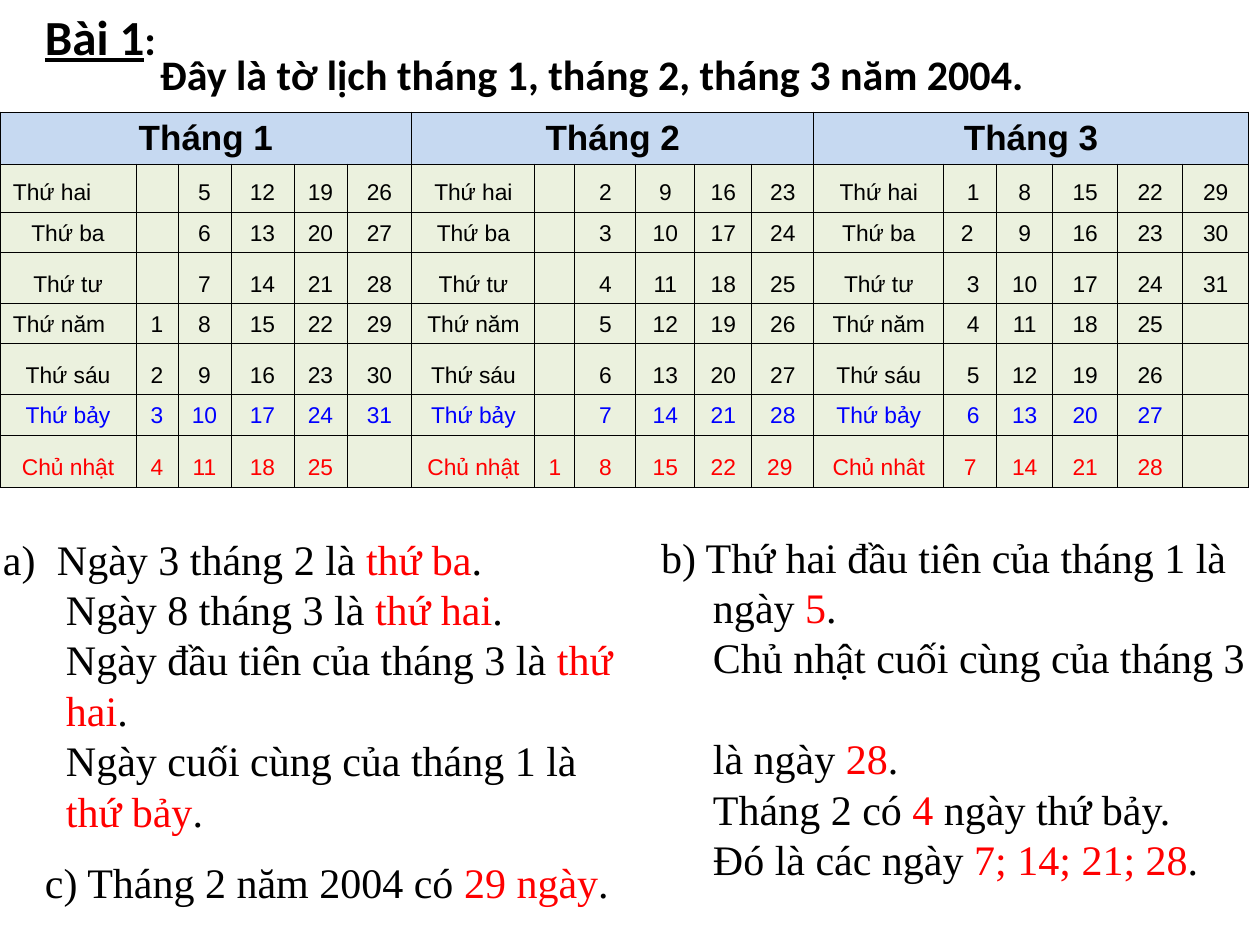
from dataclasses import dataclass

from lxml.etree import SubElement
from pptx import Presentation
from pptx.dml.color import RGBColor
from pptx.enum.text import MSO_ANCHOR as Anchor, MSO_AUTO_SIZE as AutoSize, PP_ALIGN as Align
from pptx.oxml.ns import qn
from pptx.util import Emu, Pt

PX = 914400 / 126


def px(length):
    return Emu(round(length * PX))


@dataclass(frozen=True)
class Theme:
    ink: str = "000000"
    answer: str = "FF0000"
    saturday: str = "0000FF"
    sunday: str = "FF0000"
    header_fill: str = "C6D9F1"
    day_fill: str = "EBF1DE"
    heading_font: str = "Calibri"
    table_font: str = "Arial"
    answer_font: str = "Times New Roman"
    label_size: int = 28
    text_size: int = 24
    month_size: int = 20
    day_size: int = 13
    answer_leading: float = 28.8
    border: float = 0.5
    inset: int = 13


class SlideBuilder:
    def __init__(self, slide, theme):
        self.slide = slide
        self.theme = theme

    def style(self, run, font, size, color=None, bold=False, underline=False):
        run.font.name = font
        run.font.size = Pt(size)
        run.font.bold = bold
        run.font.underline = underline
        run.font.color.rgb = RGBColor.from_string(color or self.theme.ink)

    def place(self, shape, left, top, width, height, inset_top=6):
        shape.left, shape.top, shape.width, shape.height = map(px, (left, top, width, height))
        frame = shape.text_frame
        frame.word_wrap = True
        frame.auto_size = AutoSize.NONE
        frame.vertical_anchor = Anchor.TOP
        frame.margin_left = px(self.theme.inset)
        frame.margin_top = px(inset_top)
        frame.margin_right = frame.margin_bottom = 0
        return frame

    def text_box(self):
        return self.slide.shapes.add_textbox(0, 0, 0, 0)

    def heading(self, shape, box, parts):
        """Parts are (text, size, underline)."""
        paragraph = self.place(shape, *box).paragraphs[0]
        paragraph.alignment = Align.LEFT
        for text, size, underline in parts:
            run = paragraph.add_run()
            run.text = text
            self.style(run, self.theme.heading_font, size, bold=True, underline=underline)

    def answers(self, shape, box, lines, indent=0, hanging=0, inset_top=6, gap_before=None):
        """Each line alternates plain and answer-coloured pieces."""
        theme = self.theme
        frame = self.place(shape, *box, inset_top=inset_top)
        for number, pieces in enumerate(lines):
            paragraph = frame.add_paragraph() if number else frame.paragraphs[0]
            paragraph.alignment = Align.LEFT
            paragraph.line_spacing = Pt(theme.answer_leading)
            paragraph.space_before = Pt(theme.answer_leading if number == gap_before else 0)
            properties = paragraph._p.get_or_add_pPr()
            properties.set("marL", str(px(indent if number else hanging)))
            properties.set("indent", str(px(0 if number else -hanging)))
            SubElement(properties, qn("a:buNone"))
            for index, text in enumerate(pieces):
                if text:
                    run = paragraph.add_run()
                    run.text = text
                    color = theme.answer if index % 2 else theme.ink
                    self.style(run, theme.answer_font, theme.text_size, color)

    def cell(self, cell, text, fill, size, color=None, bold=False, align=Align.CENTER, nudge=0):
        theme = self.theme
        cell.vertical_anchor = Anchor.BOTTOM
        cell.margin_left = px(theme.inset + max(nudge, 0))
        cell.margin_right = px(theme.inset + max(-nudge, 0))
        properties = cell._tc.get_or_add_tcPr()
        for side in ("lnL", "lnR", "lnT", "lnB"):
            line = SubElement(properties, qn(f"a:{side}"), w=str(Pt(theme.border)))
            SubElement(SubElement(line, qn("a:solidFill")), qn("a:srgbClr"), val=theme.ink)
        cell.fill.solid()
        cell.fill.fore_color.rgb = RGBColor.from_string(fill)
        paragraph = cell.text_frame.paragraphs[0]
        paragraph.alignment = align
        if text:
            paragraph.text = text
            self.style(paragraph.runs[0], theme.table_font, size, color, bold)
        else:
            SubElement(paragraph._p, qn("a:endParaRPr"), sz=str(size * 100))

    def calendar(self, left, top, widths, heights, months, weekdays):
        """Months are (name, date in the first Monday cell, length)."""
        theme = self.theme
        table = self.slide.shapes.add_table(
            len(heights), len(widths), px(left), px(top), px(sum(widths)), px(sum(heights))).table
        table.first_row = table.horz_banding = False
        for column, width in zip(table.columns, widths):
            column.width = px(width)
        for row, height in zip(table.rows, heights):
            row.height = px(height)
        span = len(widths) // len(months)
        colors = {6: theme.saturday, 7: theme.sunday}
        for month, (name, first_monday, length) in enumerate(months):
            start = month * span
            for column in range(start, start + span):
                self.cell(table.cell(0, column), name if column == start else "",
                          theme.header_fill, theme.month_size, bold=True)
            table.cell(0, start).merge(table.cell(0, start + span - 1))
            for row, weekday in enumerate(weekdays, 1):
                for week in range(span):
                    day = first_monday + row - 1 + 7 * (week - 1)
                    date = str(day) if 1 <= day <= length else ""
                    position = (row, start + week)
                    self.cell(table.cell(*position), date if week else weekday,
                              theme.day_fill, theme.day_size, colors.get(row),
                              align=Align.LEFT if position in LEFT_CELLS else Align.CENTER,
                              nudge=NUDGES.get(position, 0))
        # The last Sunday label is spelled differently
        table.cell(7, 12).text_frame.paragraphs[0].runs[0].text = "Chủ nhât"


WEEKDAYS = ["Thứ hai", "Thứ ba", "Thứ tư", "Thứ năm", "Thứ sáu", "Thứ bảy", "Chủ nhật"]
MONTHS = [("Tháng 1", -2, 31), ("Tháng 2", -5, 29), ("Tháng 3", 1, 31)]
COLUMN_WIDTHS = [136, 42, 53, 63, 53, 65,
                 123, 40, 61, 59, 57, 62,
                 130, 53, 56, 65, 65, 66]
ROW_HEIGHTS = [52, 48, 39, 51, 38, 51, 38, 52]
LEFT_CELLS = {(1, 0), (4, 0)}
NUDGES = {(row, 13): 6 for row in (1, 3, 4, 5, 6)} | {(2, 13): -6, (7, 11): -6}

ANSWERS_A = [
    ["a)\tNgày 3 tháng 2 là ", "thứ ba", "."],
    ["Ngày 8 tháng 3 là ", "thứ hai", "."],
    ["Ngày đầu tiên của tháng 3 là ", "thứ"],
    ["", "hai", "."],
    ["Ngày cuối cùng của tháng 1 là"],
    ["", "thứ bảy", "."],
]
ANSWERS_B = [
    ["b) Thứ hai đầu tiên của tháng 1 là"],
    ["ngày ", "5", "."],
    ["Chủ nhật cuối cùng của tháng 3"],
    ["là ngày ", "28", "."],
    ["Tháng 2 có ", "4 ", "ngày thứ bảy."],
    ["Đó là các ngày ", "7; 14; 21; 28", "."],
]
ANSWERS_C = [["c) Tháng 2 năm 2004 có ", "29 ngày", "."]]


def main():
    presentation = Presentation()
    presentation.slide_width, presentation.slide_height = px(1260), px(945)
    slide = presentation.slides.add_slide(presentation.slide_layouts[3])
    for placeholder in list(slide.placeholders):
        if placeholder.placeholder_format.idx > 2:
            placeholder.element.getparent().remove(placeholder.element)
    theme = Theme()
    builder = SlideBuilder(slide, theme)

    # Calendar of three months
    builder.calendar(0, 112, COLUMN_WIDTHS, ROW_HEIGHTS, MONTHS, WEEKDAYS)

    # Answers
    builder.answers(slide.placeholders[1], (-10, 483, 651, 360), ANSWERS_A,
                    indent=63, hanging=54, inset_top=50)
    builder.answers(slide.placeholders[2], (648, 473, 612, 369), ANSWERS_B,
                    indent=52, inset_top=58, gap_before=3)
    builder.answers(builder.text_box(), (32, 851, 620, 63), ANSWERS_C)

    # Exercise number and title
    builder.heading(builder.text_box(), (32, 0, 220, 72),
                    [("Bài 1", theme.label_size, True), (":", theme.text_size, False)])
    builder.heading(slide.shapes.title, (147, 42, 1029, 63),
                    [("Đây là tờ lịch tháng 1, tháng 2, tháng 3 năm 2004.", theme.text_size, False)])

    presentation.save("out.pptx")


if __name__ == "__main__":
    main()
